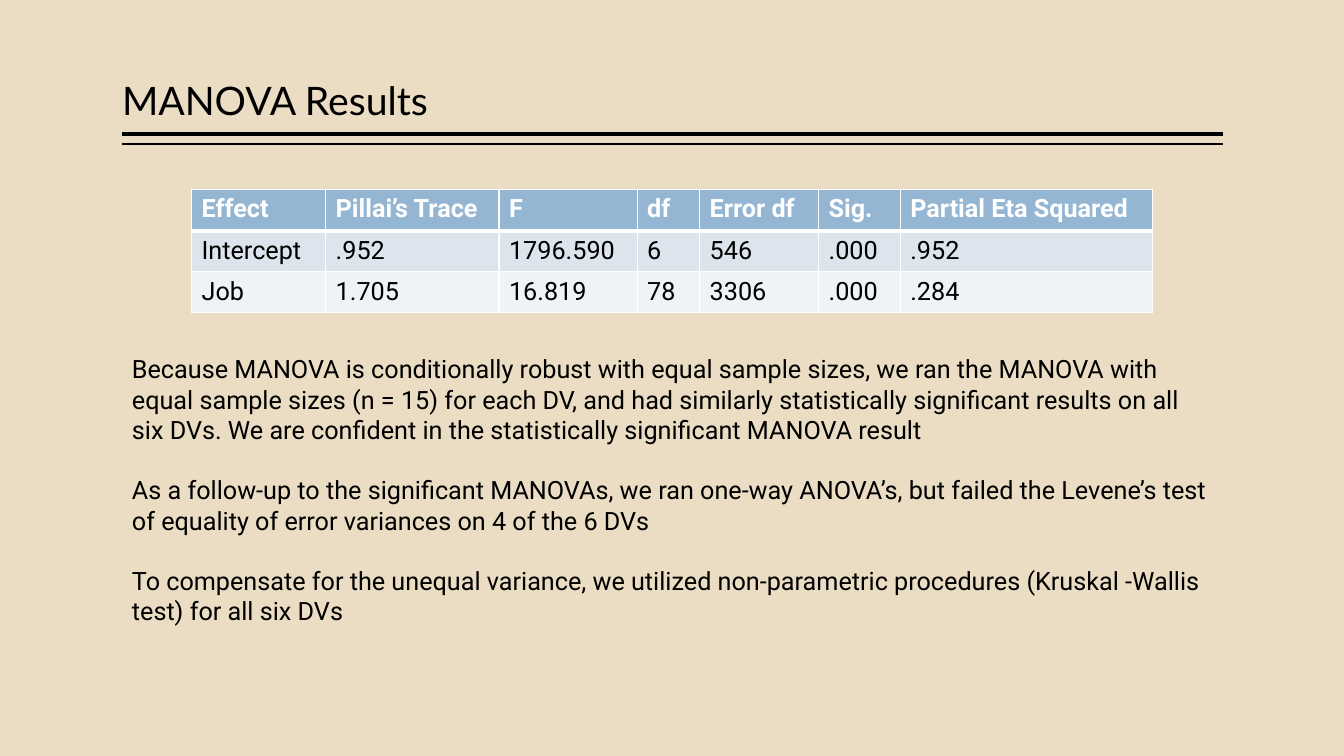
import dataclasses

import pptx
import pptx.dml.color
import pptx.enum.shapes
import pptx.enum.text
import pptx.oxml
import pptx.oxml.ns
import pptx.util


@dataclasses.dataclass(frozen=True)
class Theme:
    back: str = "EBDDC3"
    ink: str = "000000"
    white: str = "FFFFFF"
    head: str = "94B6D2"
    bands: tuple = ("DCE5EE", "EEF3F7")
    title_font: str = "Lato"
    body_font: str = "Roboto"
    title_size: float = 28
    body_size: float = 18
    gap: float = 21.6
    thick: float = 3
    thin: float = 1


THEME = Theme()
WIDE = pptx.util.Inches(13.33)
HIGH = pptx.util.Inches(7.5)

# Shares of the slide, in percent
LEFT = 9.08
SPAN = 81.92
TABLE_LEFT = 14.25
TABLE_TOP = 25.07
ROW = 5.44
COLS = (9.98, 12.9, 10.28, 4.65, 8.85, 6.08, 18.75)

TITLE = "MANOVA Results"
RESULTS = (
    ("Effect", "Pillai’s Trace", "F", "df", "Error df", "Sig.", "Partial Eta Squared"),
    ("Intercept", ".952", "1796.590", "6", "546", ".000", ".952"),
    ("Job", "1.705", "16.819", "78", "3306", ".000", ".284"),
)
NOTES = (
    "Because MANOVA is conditionally robust with equal sample sizes, we ran the "
    "MANOVA with equal sample sizes (n = 15) for each DV, and had similarly "
    "statistically significant results on all six DVs. We are confident in the "
    "statistically significant MANOVA result",
    "As a follow-up to the significant MANOVAs, we ran one-way ANOVA’s, but failed "
    "the Levene’s test of equality of error variances on 4 of the 6 DVs",
    "To compensate for the unequal variance, we utilized non-parametric procedures "
    "(Kruskal -Wallis test) for all six DVs",
)


def across(share):
    return round(WIDE * share / 100)


def down(share):
    return round(HIGH * share / 100)


def color(code):
    return pptx.dml.color.RGBColor.from_string(code)


def style(para, font, size, ink, bold=False):
    for run in para.runs:
        run.font.name = font
        run.font.size = pptx.util.Pt(size)
        run.font.bold = bold
        run.font.color.rgb = color(ink)


def add_text(slide, top, high, lines, font, size):
    box = slide.shapes.add_textbox(across(LEFT), down(top), across(SPAN), down(high))
    frame = box.text_frame
    frame.word_wrap = True
    frame.text = "\n".join(lines)
    for para in frame.paragraphs:
        style(para, font, size, THEME.ink)
    return frame


def add_title(slide):
    frame = add_text(slide, 1.07, 16, [TITLE], THEME.title_font, THEME.title_size)
    frame.vertical_anchor = pptx.enum.text.MSO_ANCHOR.BOTTOM
    frame.margin_left = frame.margin_right = 0
    frame.paragraphs[0].line_spacing = 0.9


def add_notes(slide):
    frame = add_text(slide, 46.13, 37.73, NOTES, THEME.body_font, THEME.body_size)
    for para in frame.paragraphs[1:]:
        para.space_before = pptx.util.Pt(THEME.gap)


def add_rule(slide, top, width):
    rule = slide.shapes.add_connector(
        pptx.enum.shapes.MSO_CONNECTOR.STRAIGHT,
        across(LEFT + SPAN), down(top), across(LEFT), down(top),
    )
    rule.line.color.rgb = color(THEME.ink)
    rule.line.width = pptx.util.Pt(width)
    props = rule._element.spPr
    props.append(props.makeelement(pptx.oxml.ns.qn("a:effectLst"), {}))


def add_edges(cell, top, base):
    """Draw the four cell borders; call before the fill, which must follow them."""
    props = cell._tc.get_or_add_tcPr()
    widths = {"L": THEME.thin, "R": THEME.thin, "T": top, "B": base}
    for side, width in widths.items():
        props.append(pptx.oxml.parse_xml(
            f'<a:ln{side} {pptx.oxml.ns.nsdecls("a")} w="{pptx.util.Pt(width)}">'
            f'<a:solidFill><a:srgbClr val="{THEME.white}"/></a:solidFill>'
            f'</a:ln{side}>'
        ))


def add_results(slide):
    table = slide.shapes.add_table(
        len(RESULTS), len(COLS), across(TABLE_LEFT), down(TABLE_TOP),
        across(sum(COLS)), down(ROW * len(RESULTS)),
    ).table
    for col, share in zip(table.columns, COLS):
        col.width = across(share)
    fills = (THEME.head, *THEME.bands)
    for r, (row, values, fill) in enumerate(zip(table.rows, RESULTS, fills)):
        row.height = down(ROW)
        first = r == 0
        top = THEME.thick if r == 1 else THEME.thin
        base = THEME.thick if first else THEME.thin
        ink = THEME.white if first else THEME.ink
        for cell, value in zip(row.cells, values):
            cell.text_frame.text = value
            style(cell.text_frame.paragraphs[0], THEME.body_font,
                  THEME.body_size, ink, first)
            add_edges(cell, top, base)
            cell.fill.solid()
            cell.fill.fore_color.rgb = color(fill)


def main():
    deck = pptx.Presentation()
    deck.slide_width, deck.slide_height = WIDE, HIGH
    slide = deck.slides.add_slide(deck.slide_layouts[6])
    slide.background.fill.solid()
    slide.background.fill.fore_color.rgb = color(THEME.back)
    add_rule(slide, 17.73, THEME.thick)
    add_rule(slide, 19.07, THEME.thin)
    add_title(slide)
    add_results(slide)
    add_notes(slide)
    deck.save("out.pptx")


if __name__ == "__main__":
    main()
